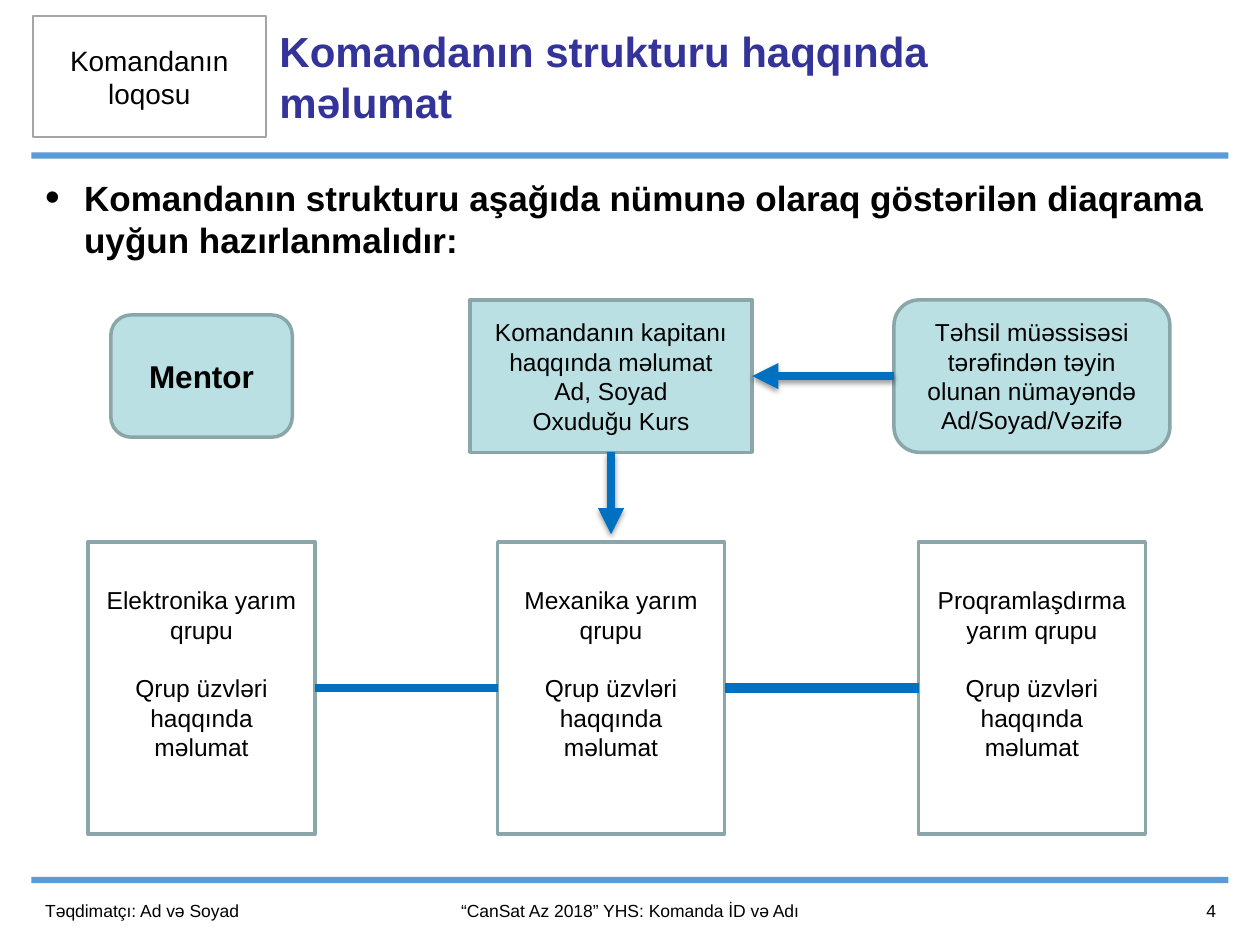
from lxml import etree
from pptx import Presentation
from pptx import util as u
from pptx.dml.color import RGBColor
from pptx.enum import shapes, text
from pptx.oxml import ns

COLS, ROWS = 100, 75  # slide grid, one cell is a tenth of an inch
FONT = "Arial"
BLACK, WHITE, NAVY = "000000", "FFFFFF", "333399"
RULE, ARROW = "5B9BD5", "0070C0"
TEAL, TEAL_EDGE, GREY = "BBE0E3", "8AA6A8", "A5A5A5"
LEFT, CENTER, RIGHT = text.PP_ALIGN.LEFT, text.PP_ALIGN.CENTER, text.PP_ALIGN.RIGHT
RECT = shapes.MSO_SHAPE.RECTANGLE
ROUND = shapes.MSO_SHAPE.ROUNDED_RECTANGLE

prs = Presentation()
prs.slide_width, prs.slide_height = u.Inches(10), u.Inches(7.5)
s = prs.slides.add_slide(prs.slide_layouts[6])


def rgb(value):
    return RGBColor.from_string(value)


def cells(*values):
    return [round(v * prs.slide_width / COLS) for v in values]


def sub(parent, tag, **attrs):
    el = etree.SubElement(parent, ns.qn(tag))
    for name, value in attrs.items():
        el.set(name, str(value))
    return el


def write(sp, lines, size, align=CENTER, color=BLACK, bold=False, gap=0,
          anchor=text.MSO_ANCHOR.MIDDLE):
    tf = sp.text_frame
    tf.word_wrap = True
    tf.vertical_anchor = anchor
    for i, line in enumerate(lines):
        p = tf.paragraphs[0] if i == 0 else tf.add_paragraph()
        p.text = line
        p.alignment = align
        if i and gap:
            p.space_before = u.Pt(gap)
        p.font.name, p.font.size, p.font.bold = FONT, u.Pt(size), bold
        p.font.color.rgb = rgb(color)
    return tf


def add_text(box, line, size, **style):
    return write(s.shapes.add_textbox(*cells(*box)), [line], size, **style)


def add_box(box, kind=RECT, fill=WHITE, edge=None, width=2):
    sp = s.shapes.add_shape(kind, *cells(*box))
    sp.shadow.inherit = False
    sp.fill.solid()
    sp.fill.fore_color.rgb = rgb(fill)
    if edge:
        sp.line.color.rgb = rgb(edge)
        sp.line.width = u.Pt(width)
    else:
        sp.line.fill.background()
    return sp


def add_link(start, width=5, end=None, to=None, arrow=False):
    """Join (shape, side) to another (shape, side) or to a free point."""
    cx = s.shapes.add_connector(shapes.MSO_CONNECTOR.STRAIGHT, 0, 0, 0, 0)
    cx.begin_connect(*start)
    if end:
        cx.end_connect(*end)
    else:
        cx.end_x, cx.end_y = to
    cx.line.color.rgb = rgb(ARROW)
    cx.line.width = u.Pt(width)
    if arrow:
        sub(cx.line._get_or_add_ln(), "a:tailEnd", type="triangle")
    effects = sub(cx._element.spPr, "a:effectLst")
    if arrow:
        shadow = sub(effects, "a:outerShdw", blurRad=u.Pt(3.1), dist=u.Pt(1.6),
                     dir=90 * 60000, rotWithShape=0)
        sub(sub(shadow, "a:srgbClr", val=BLACK), "a:alpha", val=38000)


def header(x, y, w, h):
    add_box((x, y + h, w, 0.5), fill=RULE)
    logo = add_box((x + 0.1, y + 0.1, 18.5, h - 1.4 + 0.1), edge=GREY, width=1)
    write(logo, ["Komandanın loqosu"], 16)
    add_text((x + 18.7, y + 0.1, 60, h - 1.4), "Komandanın strukturu haqqında məlumat",
             24, align=LEFT, color=NAVY, bold=True)


def intro(*box):
    tf = add_text(box, "Komandanın strukturu aşağıda nümunə olaraq göstərilən diaqrama "
                       "uyğun hazırlanmalıdır:",
                  20, align=LEFT, bold=True, anchor=text.MSO_ANCHOR.TOP)
    pPr = tf.paragraphs[0]._p.get_or_add_pPr()
    pPr.set("marL", str(u.Inches(0.31)))
    pPr.set("indent", str(u.Inches(-0.31)))
    # Bullet elements come before the paragraph's default font
    pPr.insert(0, sub(pPr, "a:buSzPct", val=120000))
    pPr.insert(1, sub(pPr, "a:buFont", typeface=FONT))
    pPr.insert(2, sub(pPr, "a:buChar", char="•"))


def diagram(x, y, w, h):
    centers = [x + 13.5, x + 46, x + 79.4]
    top_h, team_w, team_h = 12.1, 18, 23.2

    # People: mentor, captain, representative
    people = [
        (14.4, 9.7, ROUND, 18, True, ["Mentor"]),
        (22.4, top_h, RECT, 14, False,
         ["Komandanın kapitanı", "haqqında məlumat", "Ad, Soyad", "Oxuduğu Kurs"]),
        (21.9, top_h, ROUND, 14, False,
         ["Təhsil müəssisəsi tərəfindən təyin olunan nümayəndə", "Ad/Soyad/Vəzifə"]),
    ]
    top = []
    for cx, (pw, ph, kind, size, bold, lines) in zip(centers, people):
        box = (cx - pw / 2, y + (top_h - ph) / 2, pw, ph)
        top.append(add_box(box, kind, TEAL, TEAL_EDGE))
        write(top[-1], lines, size, bold=bold)
    _, captain, delegate = top

    # Teams
    teams = []
    for cx, name in zip(centers, ["Elektronika yarım qrupu", "Mexanika yarım qrupu",
                                  "Proqramlaşdırma yarım qrupu"]):
        sp = add_box((cx - team_w / 2, y + h - team_h, team_w, team_h), edge=TEAL_EDGE)
        tf = write(sp, [name, "Qrup üzvləri haqqında məlumat"], 14, gap=16.5)
        tf.margin_bottom = u.Inches(0.28)
        teams.append(sp)

    # Arrows and links
    add_link((captain, 2), to=cells(centers[1], y + 18.6), arrow=True)
    add_link((delegate, 1), end=(captain, 3), arrow=True)
    for left, right, width in zip(teams, teams[1:], (5, 5.75)):
        add_link((left, 3), width, end=(right, 1))


def footer(x, y, w, h):
    add_box((x, y, w, 0.5), fill=RULE)
    row = y + 0.7
    add_text((x + 0.1, row, 23.9, h), "Təqdimatçı: Ad və Soyad", 10, align=LEFT)
    add_text((x + 24, row, 47, h), "“CanSat Az 2018” YHS: Komanda İD və Adı", 10)
    add_text((x + w - 10, row, 10, h), "4", 10, align=RIGHT)


MARGIN = 2.5
WIDTH = COLS - 2 * MARGIN
header(MARGIN, 1.2, WIDTH, 10.9 + 1.1 - 1.1 + 0.0)
intro(MARGIN + 0.1, 13.5, WIDTH, 7.7)
diagram(MARGIN, 23.8, WIDTH, 42.4)
footer(MARGIN, ROWS - 5.4, WIDTH, 4)
prs.save("out.pptx")
